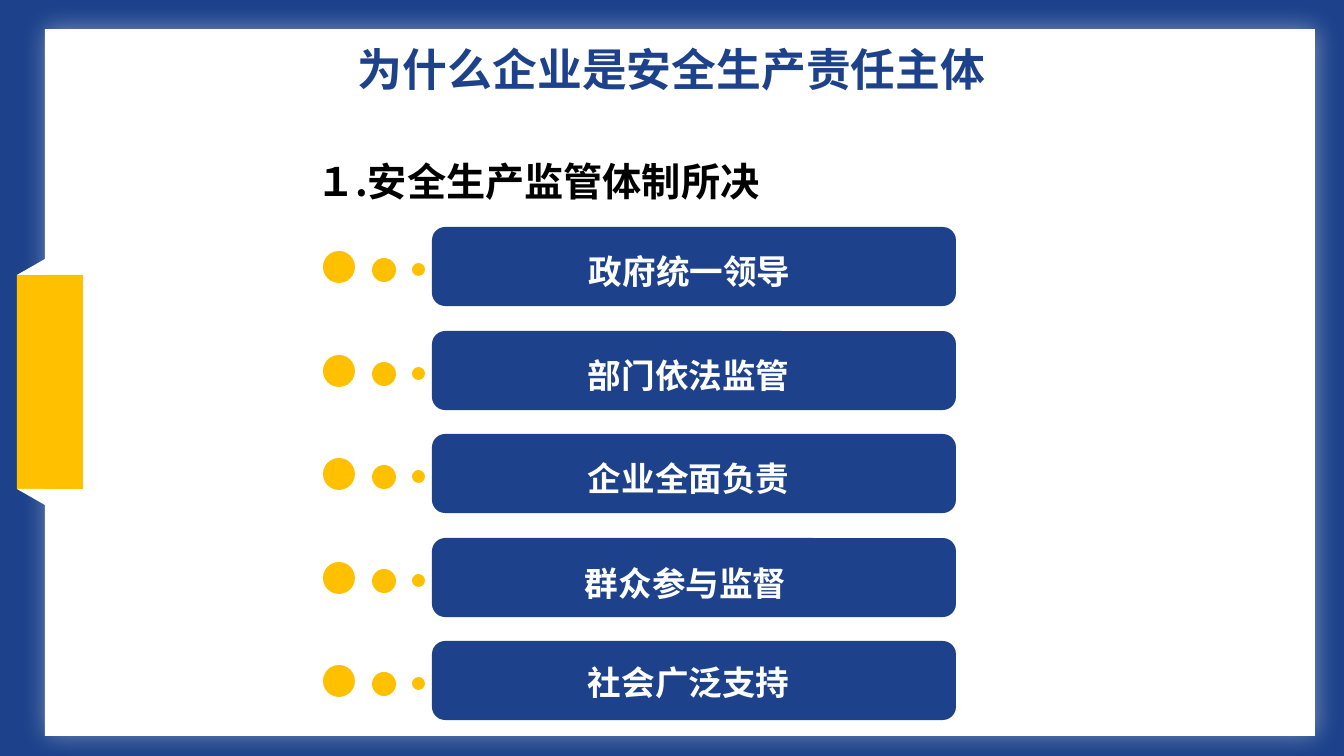
from dataclasses import dataclass

from lxml.etree import SubElement
from pptx import Presentation
from pptx.dml.color import RGBColor
from pptx.enum.shapes import MSO_SHAPE
from pptx.enum.text import MSO_ANCHOR, MSO_AUTO_SIZE, PP_ALIGN
from pptx.oxml.ns import qn
from pptx.shapes.autoshape import Shape
from pptx.shapes.shapetree import GroupShapes, SlideShapes
from pptx.slide import Slide
from pptx.text.text import _Paragraph
from pptx.util import Emu, Pt

FONT = "Noto Sans CJK SC"
BLUE, GOLD, WHITE, BLACK = "1D428B", "FFC000", "FFFFFF", "000000"
ROW_TOP, TWO_ROWS = 227, 207


@dataclass(frozen=True)
class Box:
    x: int
    y: int
    w: int
    h: int


@dataclass(frozen=True)
class Part:
    kind: MSO_SHAPE
    box: Box
    fill: str
    flips: tuple[str, ...] = ()


@dataclass(frozen=True)
class Label:
    text: str
    box: Box


FRAME = Part(MSO_SHAPE.RECTANGLE, Box(45, 29, 1270, 707), WHITE)
TAB = [
    Part(MSO_SHAPE.RECTANGLE, Box(17, 275, 66, 214), GOLD),
    Part(MSO_SHAPE.RIGHT_TRIANGLE, Box(17, 259, 28, 16), WHITE, ("flipH",)),
    Part(MSO_SHAPE.RIGHT_TRIANGLE, Box(17, 489, 28, 16), WHITE, ("flipH", "flipV")),
]
ROW = [
    Part(MSO_SHAPE.OVAL, Box(323, 24, 32, 32), GOLD),
    Part(MSO_SHAPE.ROUNDED_RECTANGLE, Box(432, 0, 524, 79), BLUE),
    Part(MSO_SHAPE.OVAL, Box(372, 31, 24, 24), GOLD),
    Part(MSO_SHAPE.OVAL, Box(412, 36, 13, 13), GOLD),
]
LABELS = [
    Label("政府统一领导", Box(529, 238, 275, 59)),
    Label("部门依法监管", Box(528, 342, 275, 54)),
    Label("企业全面负责", Box(528, 445, 275, 54)),
    Label("群众参与监督", Box(525, 550, 275, 54)),
    Label("社会广泛支持", Box(528, 649, 275, 54)),
]


def px(n: int) -> Emu:
    return Emu(round(n * 914400 / 100.8))


def rgb(color: str) -> RGBColor:
    return RGBColor.from_string(color)


def place(sp: Shape, box: Box) -> None:
    sp.left, sp.top, sp.width, sp.height = px(box.x), px(box.y), px(box.w), px(box.h)


def add_part(shapes: SlideShapes | GroupShapes, part: Part, dy: int = 0) -> Shape:
    b = part.box
    sp = shapes.add_shape(part.kind, px(b.x), px(b.y + dy), px(b.w), px(b.h))
    sp.shadow.inherit = False
    sp.fill.solid()
    sp.fill.fore_color.rgb = rgb(part.fill)
    sp.line.fill.background()
    for flip in part.flips:
        sp.element.spPr.xfrm.set(flip, "1")
    return sp


def add_halo(sp: Shape) -> None:
    effects = sp.element.spPr.find(qn("a:effectLst"))
    shadow = SubElement(effects, qn("a:outerShdw"), blurRad=str(Pt(18)),
                        dist=str(Pt(1)), dir="0", algn="ctr", rotWithShape="0")
    color = SubElement(shadow, qn("a:srgbClr"), val=WHITE)
    SubElement(color, qn("a:alpha"), val="40000")


def add_run(p: _Paragraph, text: str, size: int, color: str) -> None:
    r = p.add_run()
    r.text = text
    r.font.size = Pt(size)
    r.font.bold = True
    r.font.color.rgb = rgb(color)
    r.font.name = FONT
    SubElement(r.font._element, qn("a:ea"), typeface=FONT)


def indent(p: _Paragraph, left: int, first: int) -> None:
    pPr = p._p.get_or_add_pPr()
    pPr.set("marL", str(px(left)))
    pPr.set("indent", str(px(first)))
    SubElement(pPr, qn("a:buNone"))
    p.line_spacing = 1.2
    p.space_before = Pt(0)


def add_label(s: Slide, label: Label) -> None:
    sp = s.shapes.add_textbox(0, 0, 0, 0)
    place(sp, label.box)
    tf = sp.text_frame
    tf.word_wrap = False
    tf.auto_size = MSO_AUTO_SIZE.SHAPE_TO_FIT_TEXT
    p = tf.paragraphs[0]
    p.level = 1
    indent(p, 50, 0)
    add_run(p, label.text, 24, WHITE)


def fill_placeholders(s: Slide) -> None:
    body, title = s.placeholders[1], s.shapes.title
    for sp in (body, title):
        s.shapes.element.append(sp.element)

    place(body, Box(306, 143, 623, 79))
    body.text_frame.auto_size = MSO_AUTO_SIZE.NONE
    p = body.text_frame.paragraphs[0]
    indent(p, 38, -38)
    add_run(p, "１.安全生产监管体制所决", 28, BLACK)

    place(title, Box(291, 36, 762, 65))
    title.text_frame.auto_size = MSO_AUTO_SIZE.SHAPE_TO_FIT_TEXT
    title.text_frame.vertical_anchor = MSO_ANCHOR.MIDDLE
    p = title.text_frame.paragraphs[0]
    p.alignment = PP_ALIGN.CENTER
    add_run(p, "为什么企业是安全生产责任主体", 32, BLUE)


def main() -> None:
    prs = Presentation()
    prs.slide_width, prs.slide_height = px(1344), px(756)
    s = prs.slides.add_slide(prs.slide_layouts[1])
    s.background.fill.solid()
    s.background.fill.fore_color.rgb = rgb(BLUE)

    add_halo(add_part(s.shapes, FRAME))
    for part in TAB:
        add_part(s.shapes, part)
    fill_placeholders(s)
    for i in range(len(LABELS)):
        row = s.shapes.add_group_shape()
        for part in ROW:
            add_part(row.shapes, part, ROW_TOP + (TWO_ROWS * i + 1) // 2)
    for label in LABELS:
        add_label(s, label)
    prs.save("out.pptx")


if __name__ == "__main__":
    main()
